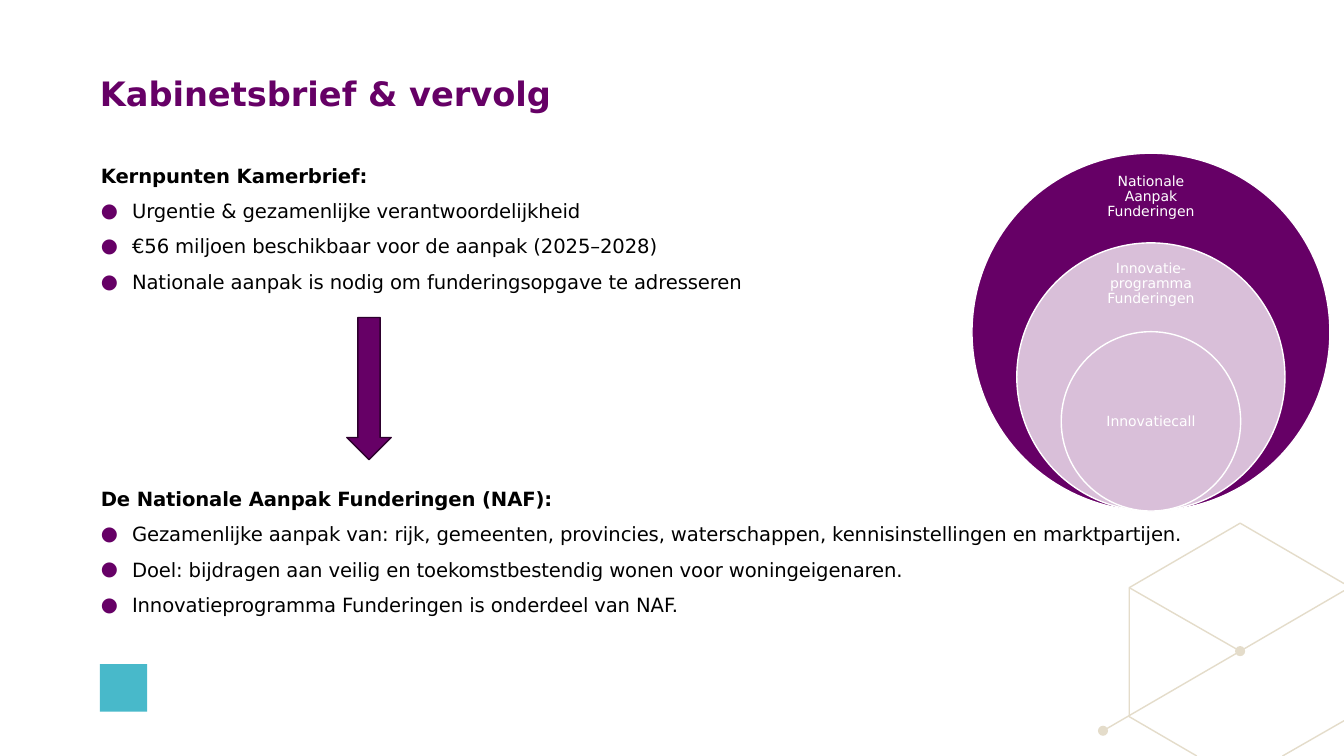
from lxml.etree import SubElement
from pptx import Presentation
from pptx.dml.color import RGBColor
from pptx.enum.shapes import MSO_SHAPE
from pptx.enum.text import MSO_ANCHOR, MSO_AUTO_SIZE, PP_ALIGN
from pptx.oxml.ns import qn
from pptx.util import Inches, Pt

FONT = "DejaVu Sans"
PURPLE, LILAC, BLACK, WHITE = "660066", "D9BFD9", "000000", "FFFFFF"
SAND, TEAL, DARK_PURPLE = "E4DCCA", "48B9CA", "2D002D"

KEY_POINTS = [
    "Kernpunten Kamerbrief:",
    "Urgentie & gezamenlijke verantwoordelijkheid",
    "€56 miljoen beschikbaar voor de aanpak (2025–2028)",
    "Nationale aanpak is nodig om funderingsopgave te adresseren",
]
APPROACH = [
    "De Nationale Aanpak Funderingen (NAF):",
    "Gezamenlijke aanpak van: rijk, gemeenten, provincies, waterschappen, "
    "kennisinstellingen en marktpartijen.",
    "Doel: bijdragen aan veilig en toekomstbestendig wonen voor woningeigenaren.",
    "Innovatieprogramma Funderingen is onderdeel van NAF.",
]
RINGS = [
    ("Nationale Aanpak Funderingen", 3.55, PURPLE, 0.17, 0.53),
    ("Innovatie-programma Funderingen", 2.66, LILAC, 1.05, 0.5),
    ("Innovatiecall", 1.78, LILAC, 2.22, 0.89),
]
LATTICE_LINES = [
    [(0.99, 2.31), (0.32, 1.92), (0.32, 0.64), (1.42, 0), (2.45, 0.6)],
    [(0.32, 0.64), (1.42, 1.27), (2.45, 0.67)],
    [(0.06, 2.06), (1.42, 1.27)],
    [(1.84, 2.31), (2.45, 1.96)],
]
LATTICE_DOTS = [(0.06, 2.06), (1.42, 1.27)]


def color(value):
    """Turn a hex string into a colour."""
    return RGBColor.from_string(value)


def place(shape, box):
    """Move a shape to a box of left, top, width and height in inches."""
    shape.left, shape.top, shape.width, shape.height = map(Inches, box)


def set_margins(frame, margin):
    """Give a text frame equal margins in inches."""
    frame.margin_left = frame.margin_right = Inches(margin)
    frame.margin_top = frame.margin_bottom = Inches(margin)


def format_text(para, size, value, bold=False):
    """Format all runs of a paragraph."""
    for span in para.runs:
        span.font.name = FONT
        span.font.size = Pt(size)
        span.font.bold = bold
        span.font.color.rgb = color(value)


def add_plain_shape(page, kind, box, fill, line=None):
    """Add a filled preset shape without shadow."""
    shape = page.shapes.add_shape(kind, *map(Inches, box))
    shape.shadow.inherit = False
    shape.fill.solid()
    shape.fill.fore_color.rgb = color(fill)
    if line:
        shape.line.color.rgb = color(line)
        shape.line.width = Pt(1)
    else:
        shape.line.fill.background()
    return shape


def add_lattice(page, box):
    """Draw the corner decoration of lines and dots."""
    left, top = box[:2]
    routes = [[(Inches(left + x), Inches(top + y)) for x, y in line]
              for line in LATTICE_LINES]
    builder = page.shapes.build_freeform(*routes[0][0])
    for index, route in enumerate(routes):
        if index:
            builder.move_to(*route[0])
        builder.add_line_segments(route[1:], close=False)
    lattice = builder.convert_to_shape()
    lattice.shadow.inherit = False
    lattice.fill.background()
    lattice.line.color.rgb = color(SAND)
    lattice.line.width = Pt(1)
    for x, y in LATTICE_DOTS:
        dot = (left + x - 0.05, top + y - 0.05, 0.1, 0.1)
        add_plain_shape(page, MSO_SHAPE.OVAL, dot, SAND)


def fill_title(title, box, text):
    """Write the title in its placeholder."""
    place(title, box)
    frame = title.text_frame
    frame.text = text
    frame.auto_size = MSO_AUTO_SIZE.NONE
    frame.vertical_anchor = MSO_ANCHOR.TOP
    set_margins(frame, 0)
    frame.paragraphs[0].alignment = PP_ALIGN.LEFT
    format_text(frame.paragraphs[0], 24, PURPLE, bold=True)


def set_bullet(para, bulleted):
    """Give a paragraph a purple dot, or remove its bullet."""
    properties = para._p.get_or_add_pPr()
    indent = Inches(0.31) if bulleted else 0
    properties.set("marL", str(indent))
    properties.set("indent", str(-indent))
    if bulleted:
        bullet_color = SubElement(properties, qn("a:buClr"))
        SubElement(bullet_color, qn("a:srgbClr")).set("val", PURPLE)
        SubElement(properties, qn("a:buFont")).set("typeface", FONT)
        SubElement(properties, qn("a:buChar")).set("char", "●")
    else:
        SubElement(properties, qn("a:buNone"))


def fill_list(body, box, lines, anchor):
    """Write a bold heading and its bullets in a body placeholder."""
    place(body, box)
    frame = body.text_frame
    frame.text = "\n".join(lines)
    frame.auto_size = MSO_AUTO_SIZE.NONE
    frame.vertical_anchor = anchor
    for index, para in enumerate(frame.paragraphs):
        set_bullet(para, index > 0)
        para.space_before = Pt(0)
        para.line_spacing = 1.5 if index else 1.0
        format_text(para, 14, BLACK, bold=index == 0)
        for span in para.runs:
            span._r.get_or_add_rPr().set("spc", "-10")


def add_rings(page, box):
    """Draw nested circles that touch at the bottom, with their labels."""
    left, top, width, height = box
    center = left + width / 2
    label_width = 1.25
    for text, size, fill, label_top, label_height in RINGS:
        circle = (center - size / 2, top + height - size, size, size)
        add_plain_shape(page, MSO_SHAPE.OVAL, circle, fill, WHITE)
        label = page.shapes.add_textbox(*map(Inches, (
            center - label_width / 2, top + label_top, label_width, label_height)))
        frame = label.text_frame
        frame.text = text
        frame.word_wrap = True
        frame.vertical_anchor = MSO_ANCHOR.MIDDLE
        set_margins(frame, 0.08)
        para = frame.paragraphs[0]
        para.alignment = PP_ALIGN.CENTER
        para.line_spacing = 0.9
        format_text(para, 10, WHITE)


def main():
    """Build the slide and save it."""
    deck = Presentation()
    deck.slide_width, deck.slide_height = Inches(13.33), Inches(7.5)
    page = deck.slides.add_slide(deck.slide_layouts.get_by_name("Two Content"))
    title, key_points, approach = page.placeholders
    add_lattice(page, (10.88, 5.19, 2.45, 2.31))
    add_plain_shape(page, MSO_SHAPE.RECTANGLE, (0.99, 6.59, 0.47, 0.47), TEAL)
    fill_title(title, (0.99, 0.72, 12.25, 0.94), "Kabinetsbrief & vervolg")
    fill_list(key_points, (0.9, 1.59, 7.73, 1.35), KEY_POINTS, MSO_ANCHOR.MIDDLE)
    fill_list(approach, (0.9, 4.78, 12.07, 1.7), APPROACH, MSO_ANCHOR.TOP)
    add_plain_shape(page, MSO_SHAPE.DOWN_ARROW, (3.44, 3.15, 0.44, 1.41),
                    PURPLE, DARK_PURPLE)
    add_rings(page, (9.64, 1.52, 3.55, 3.55))
    deck.save("out.pptx")


if __name__ == "__main__":
    main()
